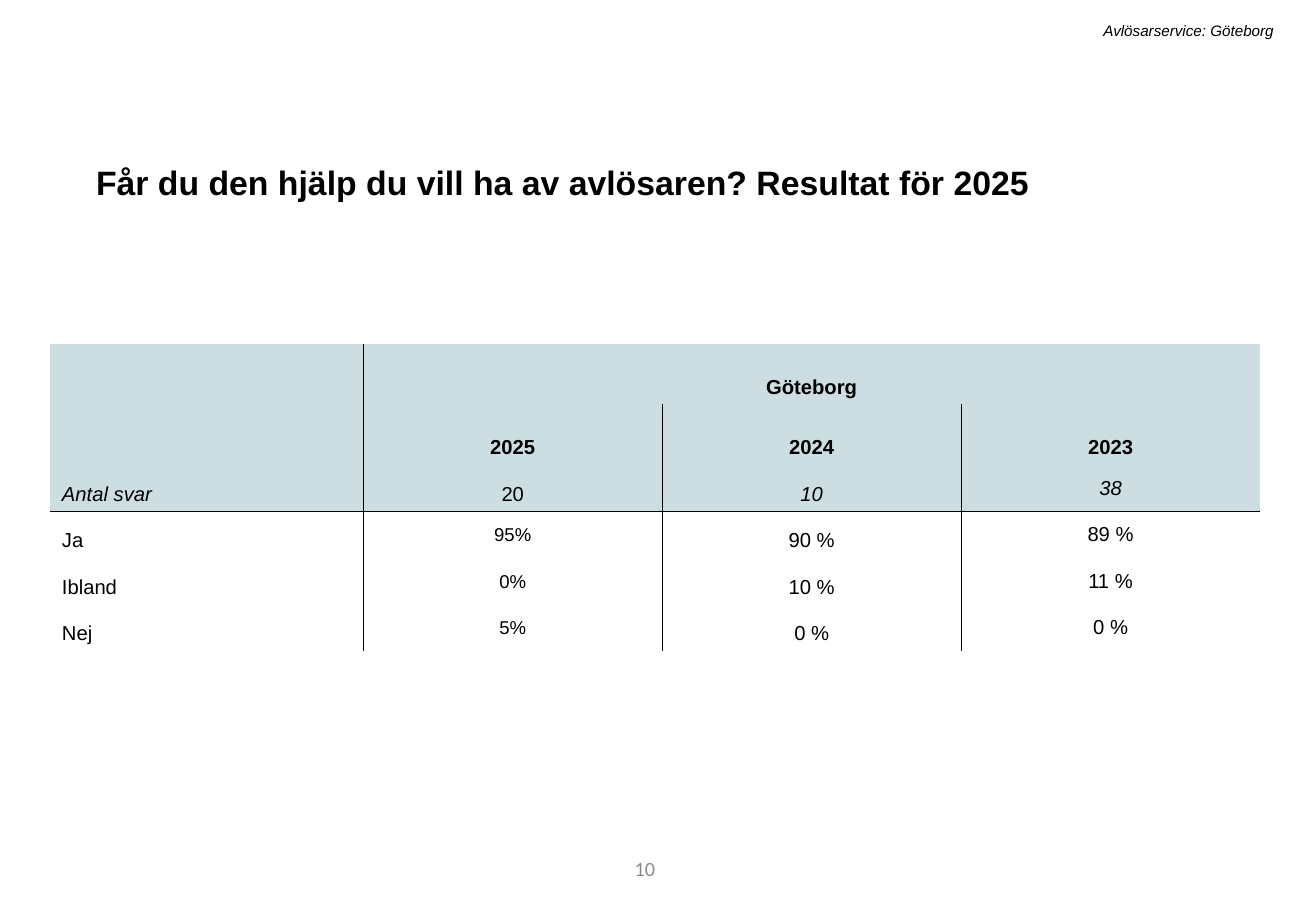
"""Survey result slide: answer shares per year for one city."""
from lxml.etree import SubElement
from pptx import Presentation
from pptx.dml.color import RGBColor
from pptx.enum.text import MSO_ANCHOR as Anchor, MSO_AUTO_SIZE as AutoSize, PP_ALIGN as Align
from pptx.oxml import parse_xml
from pptx.oxml.ns import nsdecls, qn
from pptx.util import Inches, Pt


def write(frame, text, align=Align.LEFT, spacing=None, color="000000", **font_format):
    """Put one formatted line of text into a frame."""
    line = frame.paragraphs[0]
    line.alignment, line.line_spacing = align, spacing
    run = line.add_run()
    run.text = text
    run.font.color.rgb = RGBColor.from_string(color)
    for name, value in {"name": "Arial", "size": Pt(12), **font_format}.items():
        setattr(run.font, name, value)


def set_edges(cell, visible):
    """Draw the hairlines named in visible and clear the other cell edges."""
    properties = cell._tc.get_or_add_tcPr()
    for index, side in enumerate("LRTB"):
        edge = parse_xml(f'<a:ln{side} {nsdecls("a")} w="3175"/>')
        if side in visible:
            SubElement(SubElement(edge, qn("a:solidFill")), qn("a:srgbClr"), val="000000")
        else:
            SubElement(edge, qn("a:noFill"))
        properties.insert(index, edge)


deck = Presentation()
deck.slide_width, deck.slide_height = Inches(10.83), Inches(7.5)
slide = deck.slides.add_slide(deck.slide_layouts[5])

question = slide.shapes.title
question.left, question.top, question.width, question.height = map(Inches, (0.69, 1.28, 9.4, 0.44))
question.text_frame.auto_size = AutoSize.NONE
question.text_frame.vertical_anchor = Anchor.TOP
write(question.text_frame, "Får du den hjälp du vill ha av avlösaren? Resultat för 2025",
      size=Pt(20), bold=True)

corner_notes = [
    ("Avlösarservice: Göteborg", (1.72, 0.13, 8.86, 0.25), Anchor.TOP,
     {"size": Pt(9), "italic": True}),
    ("10", (3.05, 6.95, 2.44, 0.4), Anchor.MIDDLE, {"name": "Calibri", "color": "8C8C8C"}),
]
for text, place, anchor, text_format in corner_notes:
    note = slide.shapes.add_textbox(*map(Inches, place)).text_frame
    note.word_wrap, note.vertical_anchor = True, anchor
    write(note, text, Align.RIGHT, **text_format)

results = [
    ["", "Göteborg", "", ""],
    ["", "2025", "2024", "2023"],
    ["Antal svar", "20", "10", "38"],
    ["Ja", "95%", "90 %", "89 %"],
    ["Ibland", "0%", "10 %", "11 %"],
    ["Nej", "5%", "0 %", "0 %"],
]
YEAR_ROW, COUNT_ROW = 1, 2
column_widths = [2.58] + [2.46] * 3
row_heights = [0.5] * 2 + [0.38] * 4
answers = slide.shapes.add_table(
    len(row_heights), len(column_widths), Inches(0.41), Inches(2.83),
    Inches(sum(column_widths)), Inches(sum(row_heights))).table
answers.first_row = answers.horz_banding = False
for column, width in zip(answers.columns, column_widths):
    column.width = Inches(width)
for row, height in zip(answers.rows, row_heights):
    row.height = Inches(height)
answers.cell(0, 1).merge(answers.cell(0, 3))

for r, values in enumerate(results):
    for c, text in enumerate(values):
        cell = answers.cell(r, c)
        heading, current_share = r <= YEAR_ROW, r > COUNT_ROW and c == 1
        cell.vertical_anchor = Anchor.BOTTOM if heading else Anchor.MIDDLE
        if r <= COUNT_ROW:
            cell.fill.solid()
            cell.fill.fore_color.rgb = RGBColor.from_string("CCDEE1")
        else:
            cell.fill.background()
        if current_share:
            cell.margin_left = cell.margin_right = cell.margin_top = Inches(0.01)
            cell.margin_bottom = 0
        set_edges(cell, [side for side, shown in {
            "L": c == 1 or (c > 1 and r >= YEAR_ROW),
            "R": c == 0 or (c < 3 and r >= YEAR_ROW),
            "T": r == COUNT_ROW + 1,
            "B": r == COUNT_ROW,
        }.items() if shown])
        if text:
            single_spaced = r == 0 or c == 3 or current_share
            write(cell.text_frame, text, Align.CENTER if c else Align.LEFT,
                  None if single_spaced else Pt(20.3),
                  size=Pt(11 if current_share else 12), bold=heading,
                  italic=r == COUNT_ROW and c != 1)

deck.save("out.pptx")
